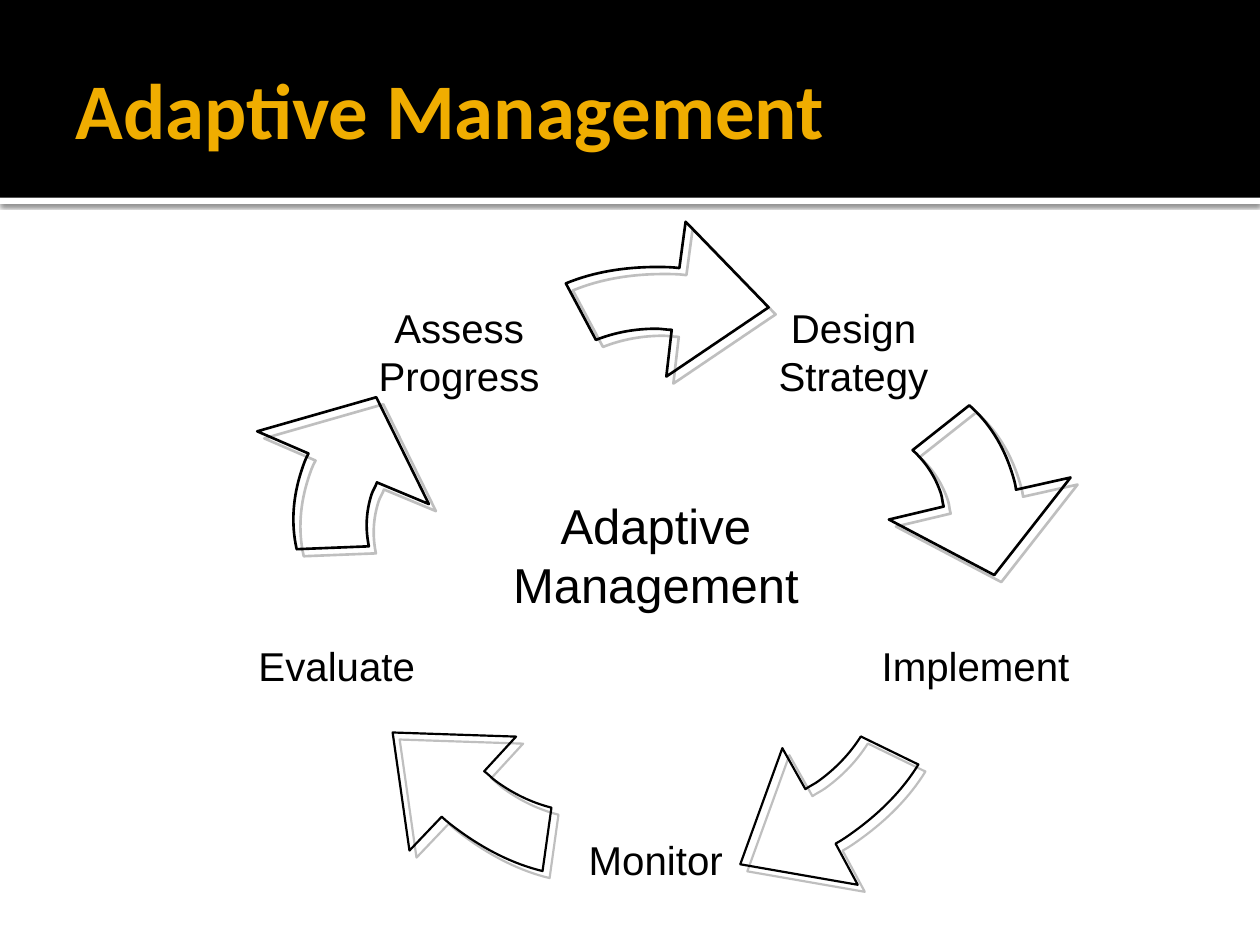
from lxml.etree import SubElement
from pptx import Presentation
from pptx.dml.color import RGBColor
from pptx.enum.shapes import MSO_SHAPE
from pptx.enum.text import MSO_ANCHOR, PP_ALIGN
from pptx.oxml.ns import qn
from pptx.util import Pt

BLACK = RGBColor(0x00, 0x00, 0x00)
WHITE = RGBColor(0xFF, 0xFF, 0xFF)
GOLD = RGBColor(0xF0, 0xAD, 0x00)
GREY = RGBColor(0x80, 0x80, 0x80)

presentation = Presentation()
presentation.slide_width = Pt(720)
presentation.slide_height = Pt(540)
slide = presentation.slides.add_slide(presentation.slide_layouts[6])


def add_text(text, left, top, width, height, size, font="Arial", color=BLACK,
             bold=False, align=PP_ALIGN.CENTER, anchor=MSO_ANCHOR.MIDDLE,
             margins=(0, 0, 0, 0)):
    """Add a text box; each line of the text becomes a paragraph."""
    box = slide.shapes.add_textbox(Pt(left), Pt(top), Pt(width), Pt(height))
    frame = box.text_frame
    frame.word_wrap = True
    frame.vertical_anchor = anchor
    (frame.margin_left, frame.margin_top,
     frame.margin_right, frame.margin_bottom) = [Pt(margin) for margin in margins]
    frame.text = text
    for paragraph in frame.paragraphs:
        paragraph.alignment = align
        paragraph.font.size = Pt(size)
        paragraph.font.name = font
        paragraph.font.bold = bold
        paragraph.font.color.rgb = color


def add_shadow(shape, color, opacity, blur, distance, angle):
    """Give the shape an outer shadow that does not turn with it."""
    shape.shadow.inherit = False
    effects = shape._element.spPr.find(qn("a:effectLst"))
    shadow = SubElement(effects, qn("a:outerShdw"), blurRad=str(Pt(blur)),
                        dist=str(Pt(distance)), dir=str(angle * 60000),
                        algn="tl", rotWithShape="0")
    shadow_color = SubElement(shadow, qn("a:srgbClr"), val=str(color))
    SubElement(shadow_color, qn("a:alpha"), val=str(opacity * 1000))


# Title band: white strip with a shadow below the black header
strip, header = [
    slide.shapes.add_shape(MSO_SHAPE.RECTANGLE, 0, Pt(top), Pt(720), Pt(height))
    for top, height in ((113, 3.6), (0, 113))
]
for band, color in ((strip, WHITE), (header, BLACK)):
    band.fill.solid()
    band.fill.fore_color.rgb = color
    band.line.fill.background()
    band.shadow.inherit = False
add_shadow(strip, BLACK, 60, 2.5, 0.8, 90)
add_text("Adaptive Management", 36, 12.2, 648, 98.6, 45, font="Calibri",
         color=GOLD, bold=True, align=PP_ALIGN.LEFT, margins=(7.2, 3.6, 3.6, 3.6))

# Curved arrow in thousandths of its frame: three points make a curve
ARROW = [
    ("moveTo", [(534, 168)]),
    ("cubicBezTo", [(522, 168), (511, 165), (500, 165)]),
    ("cubicBezTo", [(452, 165), (407, 175), (365, 195)]),
    ("lnTo", [(298, 44)]),
    ("cubicBezTo", [(360, 13), (430, 0), (500, 0)]),
    ("cubicBezTo", [(517, 0), (534, 0), (551, 3)]),
    ("lnTo", [(565, -121)]),
    ("lnTo", [(750, 108)]),
    ("lnTo", [(522, 293)]),
    ("close", []),
]
LONG, SHORT = 256.3, 213.8

# Five arrows of the cycle, each turned 72 degrees further
ARROW_FRAMES = [
    (247, 152.6, LONG, SHORT, 1.5),
    (349.2, 180.7, SHORT, LONG, 1.5),
    (297.4, 281.5, LONG, SHORT, 1.25),
    (197.3, 281.5, LONG, SHORT, 1.25),
    (187.2, 180.7, SHORT, LONG, 1.5),
]
for step, (left, top, width, height, weight) in enumerate(ARROW_FRAMES):
    builder = slide.shapes.build_freeform(
        0, 0, scale=(Pt(width) / 1000, Pt(height) / 1000))
    builder.add_line_segments([(1000, 0), (1000, 1000), (0, 1000)])
    arrow = builder.convert_to_shape(Pt(left), Pt(top))
    outline = next(arrow._element.iter(qn("a:path")))
    for segment in list(outline):
        outline.remove(segment)
    for command, points in ARROW:
        segment = SubElement(outline, qn("a:" + command))
        for x, y in points:
            SubElement(segment, qn("a:pt"), x=str(x), y=str(y))
    outline.set("w", "1000")
    outline.set("h", "1000")
    arrow.rotation = step * 72
    arrow.fill.background()
    arrow.line.color.rgb = BLACK
    arrow.line.width = Pt(weight)
    add_shadow(arrow, GREY, 50, 0, 5.7, 45)

# Stage names between the arrows, centred on x; the longest word needs more width
STAGES = [
    ("Design Strategy", 487.8, 161.6, 94.3),
    ("Implement", 557.6, 340.9, 114),
    ("Monitor", 374.8, 451.7, 94.3),
    ("Evaluate", 192.5, 340.9, 94.3),
    ("Assess Progress", 262.4, 161.6, 94.3),
]
for stage, center, top, width in STAGES:
    add_text(stage, center - width / 2, top, width, 78.5, 23)

# Name of the cycle in the middle
add_text("Adaptive\nManagement", 238.3, 276.5, 272.9, 92.9, 28,
         anchor=MSO_ANCHOR.TOP, margins=(13, 6.5, 13, 6.5))

presentation.save("out.pptx")
